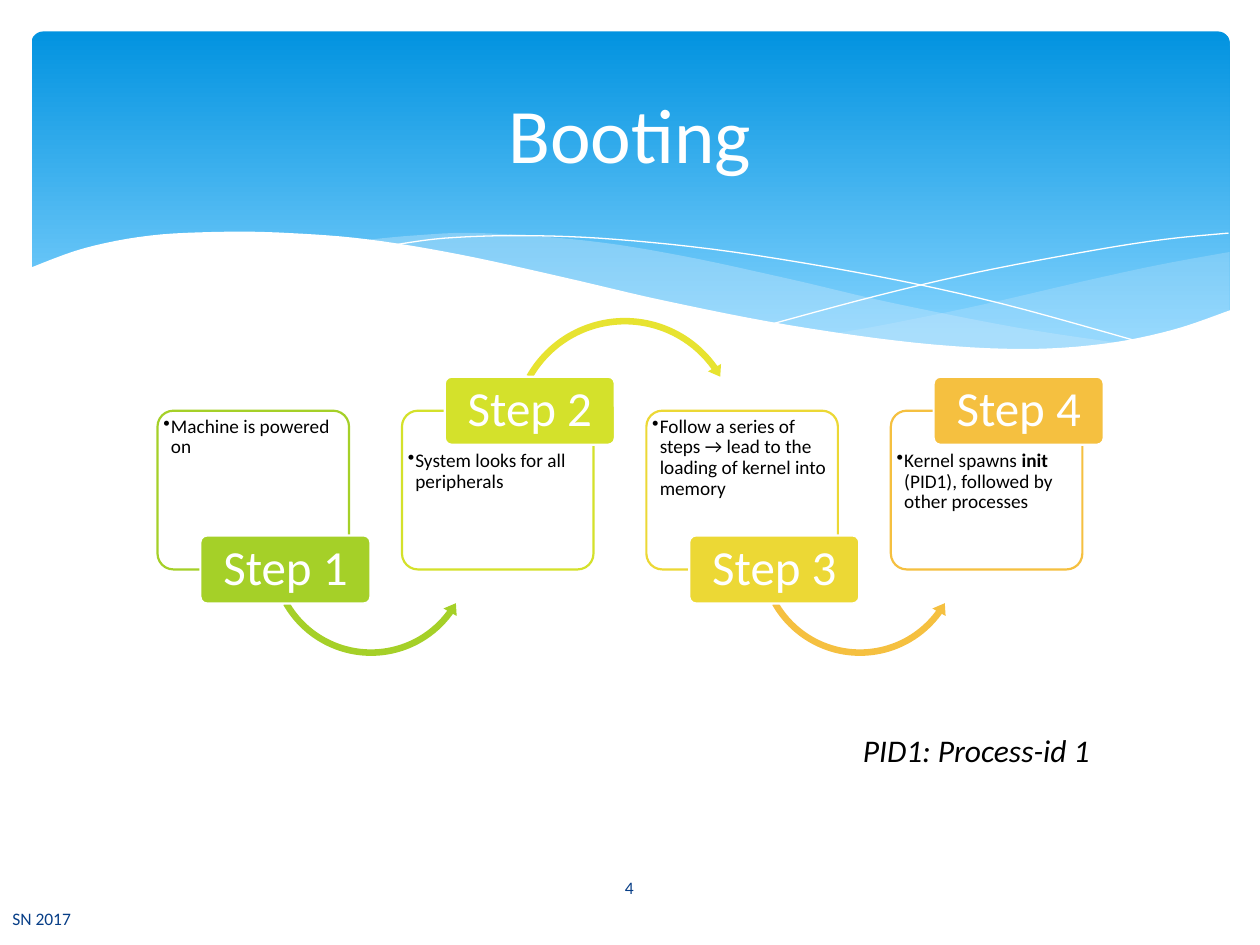
from lxml import etree
from pptx import Presentation
from pptx.dml.color import RGBColor
from pptx.enum.shapes import MSO_SHAPE
from pptx.enum.text import MSO_ANCHOR, PP_ALIGN
from pptx.oxml.ns import qn
from pptx.util import Inches, Pt

ROUNDED = MSO_SHAPE.ROUNDED_RECTANGLE
ARC_OVER = MSO_SHAPE.CIRCULAR_ARROW
ARC_UNDER = MSO_SHAPE.LEFT_CIRCULAR_ARROW
LEFT, CENTER = PP_ALIGN.LEFT, PP_ALIGN.CENTER
TOP, MIDDLE = MSO_ANCHOR.TOP, MSO_ANCHOR.MIDDLE

FONT = "Calibri"
COLORS = {
    "white": "FFFFFF", "black": "000000", "navy": "073E87",
    "sky": "0293E0", "pale_sky": "83D3FE", "mist": "C6E7FC",
    "green": "A5D028", "lime": "D4E12B", "lemon": "E7E330",
    "yellow": "ECD835", "orange": "F5C040",
}
STEPS = [
    ("Step 1", "green", "green", [("Machine is powered on", False)]),
    ("Step 2", "lime", "lemon", [("System looks for all peripherals", False)]),
    ("Step 3", "yellow", "orange",
     [("Follow a series of steps → lead to the loading of kernel into memory", False)]),
    ("Step 4", "orange", None,
     [("Kernel spawns ", False), ("init ", True),
      ("(PID1), followed by other processes", False)]),
]
PITCH = 1.94

RIGHT_WAVE = [
    [(9.76, 2), (9.21, 2.1), (8.61, 2.23), (7.79, 2.42), (7.06, 2.57), (6.61, 2.65)],
    [(6.61, 2.65), (7.19, 2.72), (7.81, 2.77), (8.35, 2.77), (8.89, 2.72),
     (9.35, 2.62), (9.76, 2.47)],
]
MIDDLE_WAVE = [
    [(8.93, 2.73), (8.07, 2.6), (7.06, 2.4), (6.29, 2.22), (5.41, 2.03),
     (4.65, 1.91), (3.8, 1.85), (3.28, 1.87), (2.86, 1.91)],
    [(2.86, 1.91), (3.62, 2.03), (4.49, 2.22), (5.66, 2.48), (6.5, 2.64),
     (7.22, 2.74), (7.96, 2.78), (8.48, 2.77), (8.93, 2.73)],
]
FALLING_LINE = [[(3.09, 1.95), (3.53, 1.89), (4.16, 1.87), (4.89, 1.9), (5.82, 2),
                 (6.95, 2.19), (7.95, 2.41), (9.07, 2.72)]]
RISING_LINE = [[(6.13, 2.57), (6.95, 2.35), (7.76, 2.16), (8.66, 1.99),
                (9.24, 1.9), (9.75, 1.85)]]
WHITE_WAVE = [
    [(9.77, 2.46), (9.3, 2.62), (8.75, 2.73), (8.09, 2.77), (7.26, 2.72),
     (6.26, 2.58), (5.29, 2.39), (4.47, 2.2), (3.65, 2.02), (2.92, 1.9),
     (2.3, 1.85), (1.77, 1.84), (1.19, 1.87), (0.67, 1.97), (0.23, 2.13)],
    [(0.23, 3.29), (9.77, 3.29)],
]


def rgb(name):
    return RGBColor.from_string(COLORS[name])


def paint(shape, fill=None, line=None, width=1.25, opacity=None):
    shape.shadow.inherit = False
    if fill:
        shape.fill.solid()
        shape.fill.fore_color.rgb = rgb(fill)
        if opacity is not None:
            color = shape.fill._xPr.find(".//" + qn("a:srgbClr"))
            etree.SubElement(color, qn("a:alpha"), val=str(opacity * 1000))
    else:
        shape.fill.background()
    if line:
        shape.line.color.rgb = rgb(line)
        shape.line.width = Pt(width)
    else:
        shape.line.fill.background()


def add_preset(page, kind, box, adjustments):
    shape = page.shapes.add_shape(kind, *map(Inches, box))
    for index, value in enumerate(adjustments):
        shape.adjustments[index] = value
    return shape


def write(shape, spans, size, color, align=LEFT, anchor=MIDDLE, wrap=True,
          insets=(0.1, 0.05, 0.1, 0.05)):
    frame = shape.text_frame
    frame.word_wrap = wrap
    frame.vertical_anchor = anchor
    (frame.margin_left, frame.margin_top,
     frame.margin_right, frame.margin_bottom) = map(Inches, insets)
    para = frame.paragraphs[0]
    para.alignment = align
    para.font.name, para.font.size = FONT, Pt(size)
    para.font.color.rgb = rgb(color)
    for text, bold in spans:
        span = para.add_run()
        span.text = text
        if bold:
            span.font.bold = True
    return para


def add_text(page, box, text, size, color, **options):
    shape = page.shapes.add_textbox(*map(Inches, box))
    return write(shape, [(text, False)], size, color, **options)


def smooth(knots, pieces=6):
    padded = [knots[0], *knots, knots[-1]]
    points = [knots[0]]
    for a, b, c, d in zip(padded, padded[1:], padded[2:], padded[3:]):
        for step in range(1, pieces + 1):
            t = step / pieces
            points.append(tuple(
                q + t / 2 * (r - p + t * (2 * p - 5 * q + 4 * r - s
                                          + t * (3 * (q - r) + s - p)))
                for p, q, r, s in zip(a, b, c, d)))
    return points


def add_wave(page, curves, closed=True, **style):
    points = [(Inches(x), Inches(y)) for curve in curves for x, y in smooth(curve)]
    builder = page.shapes.build_freeform(*points[0])
    builder.add_line_segments(points[1:], close=closed)
    paint(builder.convert_to_shape(), **style)


def add_banner(page, box):
    panel = add_preset(page, ROUNDED, box, [0.034])
    paint(panel)
    panel.fill.gradient()
    panel.fill.gradient_angle = 270
    for stop, position, color in zip(panel.fill.gradient_stops, (0, 0.9),
                                     ("sky", "pale_sky")):
        stop.position = position
        stop.color.rgb = rgb(color)
    add_wave(page, RIGHT_WAVE, fill="mist", opacity=29)
    add_wave(page, MIDDLE_WAVE, fill="mist", opacity=40)
    for curve in (FALLING_LINE, RISING_LINE):
        add_wave(page, curve, closed=False, line="white", width=0)
    add_wave(page, WHITE_WAVE, fill="white")


def add_step(page, box, step, raised):
    left, top, width, height = box
    title, color, arrow_color, spans = step
    card = add_preset(page, ROUNDED, box, [0.1])
    paint(card, "white", color, opacity=90)
    para = write(card, spans, 11, "black", anchor=TOP,
                 insets=(0.01, 0.28 if raised else 0.01, 0.01, 0.02))
    para.line_spacing = 0.9
    props = para._p.get_or_add_pPr()
    props.set("marL", str(Inches(0.06)))
    props.set("indent", str(-Inches(0.06)))
    bullet = etree.Element(qn("a:buChar"), char="•")
    props.find(qn("a:lnSpc")).addnext(bullet)

    if arrow_color:
        if raised:
            arrow = add_preset(page, ARC_OVER, (left + 0.84, top - 0.77, 1.86, 1.86),
                               [0.028, 3.356, 194.889, 125.755, 0.032])
        else:
            arrow = add_preset(page, ARC_UNDER, (left + 0.86, top + 0.31, 1.67, 1.67),
                               [0.031, 3.776, 21.532, 90.245, 0.036])
        paint(arrow, arrow_color)

    label_top = top - 0.27 if raised else top + height - 0.27
    label = add_preset(page, ROUNDED, (left + 0.34, label_top, 1.35, 0.54), [0.1])
    paint(label, color, "white")
    para = write(label, [(title, False)], 28, "white", align=CENTER,
                 insets=(0.06, 0.04, 0.06, 0.04))
    para.line_spacing = 0.9


def add_steps(page, box):
    left, top, width, height = box
    for index, step in enumerate(STEPS):
        add_step(page, (left + index * PITCH, top, width, height), step, index % 2 == 1)


def main():
    deck = Presentation()
    deck.slide_width, deck.slide_height = Inches(10), Inches(7.5)
    page = deck.slides.add_slide(deck.slide_layouts[6])
    add_banner(page, (0.25, 0.25, 9.51, 2.7))
    add_steps(page, (1.25, 3.26, 1.52, 1.26))
    add_text(page, (0, 7.09, 4.14, 0.4), "SN 2017", 10, "navy")
    add_text(page, (4.36, 6.84, 1.27, 0.4), "4", 10, "navy", align=CENTER)
    add_text(page, (0.5, 0.37, 9, 1.37), "Booting", 44, "white", align=CENTER)
    note = add_text(page, (6.75, 5.75, 2.15, 0.4), "PID1: Process-id 1", 18, "black",
                    anchor=TOP, wrap=False)
    note.font.italic = True
    deck.save("out.pptx")


if __name__ == "__main__":
    main()
